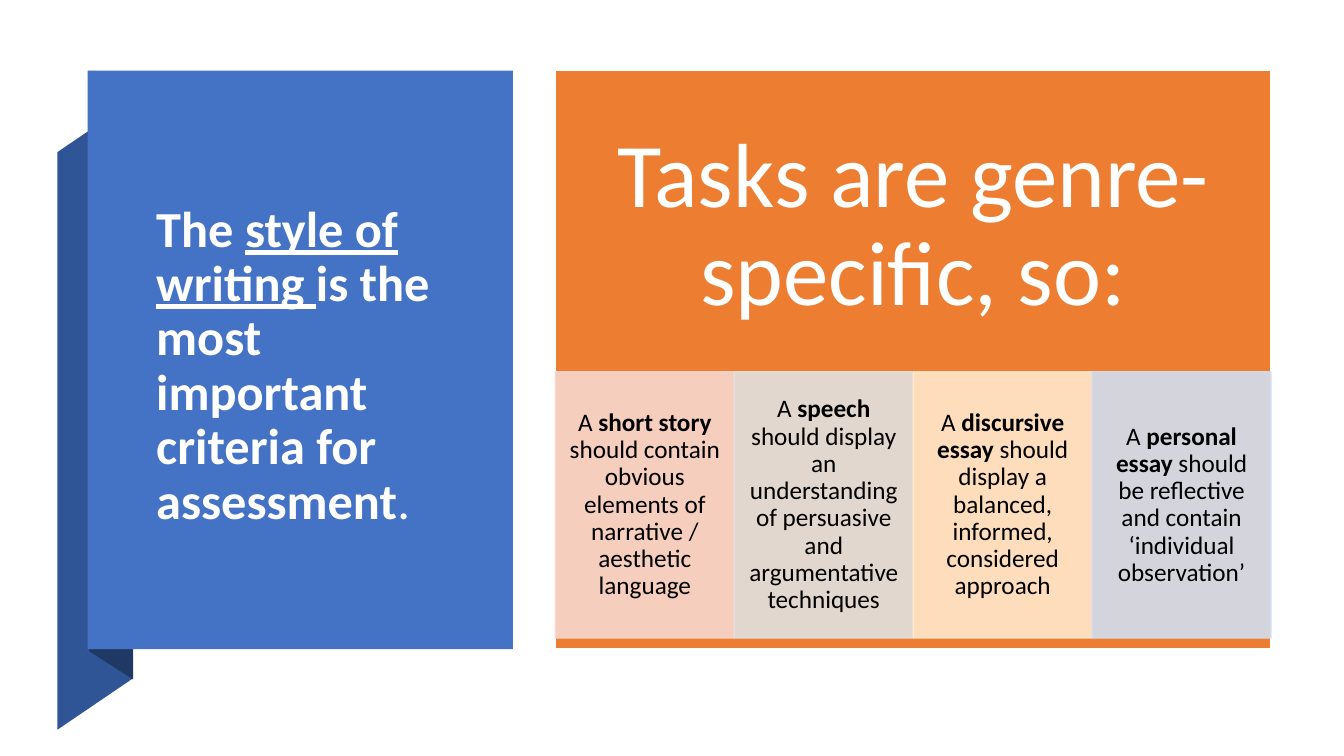
import lxml.etree
import pptx
import pptx.util
import pptx.dml.color
import pptx.enum.shapes
import pptx.enum.text
import pptx.oxml.ns

Pt = pptx.util.Pt

# Content: each run is (text, style)
TITLE = [
    ("The ", "bold"),
    ("style of writing ", "bold underline"),
    ("is the most important criteria for assessment", "bold"),
    (".", ""),
]
HEADLINE = [("Tasks are genre-specific, so:", "")]
GENRES = [
    ("F8D7CE", [("A ", ""), ("short story", "bold"),
                (" should contain obvious elements of narrative / aesthetic language", "")]),
    ("E1E1E1", [("A ", ""), ("speech", "bold"),
                (" should display an understanding of persuasive and argumentative techniques", "")]),
    ("FFE8CC", [("A ", ""), ("discursive essay", "bold"),
                (" should display a balanced, informed, considered approach", "")]),
    ("D2DEEF", [("A", ""), (" personal essay", "bold"),
                (" should be reflective and contain ‘individual observation’", "")]),
]


class Theme:
    font = "Calibri"
    white, black = "FFFFFF", "000000"
    blue, ribbon, fold = "4472C4", "2F5597", "203864"
    orange = "ED7D31"
    title_size, headline_size, card_size = 36, 65, 18
    card_opacity = 90


# Geometry in points: left, top, width, height
BLUE_PANEL = (62.6, 50.4, 303.8, 413.3)
TITLE_BOX = (104.4, 120.2, 216.7, 283.7)
ORANGE_PANEL = (396.7, 50.4, 511.2, 413.3)
HEADLINE_BOX = (396.7, 50.4, 511.2, 223.2)
CARD_TOP, CARD_HEIGHT = 265.7, 190.1
RIBBON = [(41, 521.3), (95, 484.6), (95, 72), (41, 108.7)]
FOLD = [(63.4, 465), (95, 485.3), (95, 71.3), (63.4, 50.4)]


def color(value):
    return pptx.dml.color.RGBColor.from_string(value)


def paint(shape, fill, line=None):
    shape.shadow.inherit = False
    shape.fill.solid()
    shape.fill.fore_color.rgb = color(fill)
    if line:
        shape.line.color.rgb = color(line)
        shape.line.width = Pt(1)
    else:
        shape.line.fill.background()


def add_outline(slide, points, fill):
    corners = [(Pt(x), Pt(y)) for x, y in points]
    builder = slide.shapes.build_freeform(*corners[0])
    builder.add_line_segments(corners[1:], close=True)
    paint(builder.convert_to_shape(), fill)


def add_rectangle(slide, box, fill, line=None):
    shape = slide.shapes.add_shape(
        pptx.enum.shapes.MSO_SHAPE.RECTANGLE, *map(Pt, box))
    paint(shape, fill, line)
    return shape


def set_opacity(shape, percent):
    for element in list(shape.element.iter(pptx.oxml.ns.qn("a:srgbClr"))):
        alpha = lxml.etree.SubElement(element, pptx.oxml.ns.qn("a:alpha"))
        alpha.set("val", str(percent * 1000))


def write(shape, runs, size, text_color, align, inset_x, inset_y):
    frame = shape.text_frame
    frame.word_wrap = True
    frame.auto_size = pptx.enum.text.MSO_AUTO_SIZE.NONE
    frame.vertical_anchor = pptx.enum.text.MSO_ANCHOR.MIDDLE
    frame.margin_left = frame.margin_right = Pt(inset_x)
    frame.margin_top = frame.margin_bottom = Pt(inset_y)
    paragraph = frame.paragraphs[0]
    paragraph.alignment = align
    paragraph.line_spacing = 0.9
    for text, style in runs:
        run = paragraph.add_run()
        run.text = text
        run.font.name = Theme.font
        run.font.size = Pt(size)
        run.font.color.rgb = color(text_color)
        run.font.bold = "bold" in style
        run.font.underline = "underline" in style


def main():
    presentation = pptx.Presentation()
    presentation.slide_width, presentation.slide_height = Pt(960), Pt(540)
    slide = presentation.slides.add_slide(presentation.slide_layouts[5])
    left = pptx.enum.text.PP_ALIGN.LEFT
    center = pptx.enum.text.PP_ALIGN.CENTER

    # Folded ribbon and blue title panel
    add_outline(slide, RIBBON, Theme.ribbon)
    add_outline(slide, FOLD, Theme.fold)
    panel = add_rectangle(slide, BLUE_PANEL, Theme.blue)

    # Title, lifted in front of its panel
    title = slide.shapes.title
    title.left, title.top, title.width, title.height = map(Pt, TITLE_BOX)
    panel.element.addnext(title.element)
    write(title, TITLE, Theme.title_size, Theme.white, left, 7.2, 3.6)

    # Orange panel with headline
    add_rectangle(slide, ORANGE_PANEL, Theme.orange, Theme.white)
    headline = slide.shapes.add_textbox(*map(Pt, HEADLINE_BOX))
    write(headline, HEADLINE, Theme.headline_size, Theme.white, center, 36.7, 36.7)

    # Genre cards, equal shares of the orange panel
    card_width = ORANGE_PANEL[2] / len(GENRES)
    for index, (fill, runs) in enumerate(GENRES):
        card_left = ORANGE_PANEL[0] + index * card_width
        card = add_rectangle(
            slide, (card_left, CARD_TOP, card_width, CARD_HEIGHT), fill, fill)
        set_opacity(card, Theme.card_opacity)
        write(card, runs, Theme.card_size, Theme.black, center, 10, 2)

    presentation.save("out.pptx")


if __name__ == "__main__":
    main()
